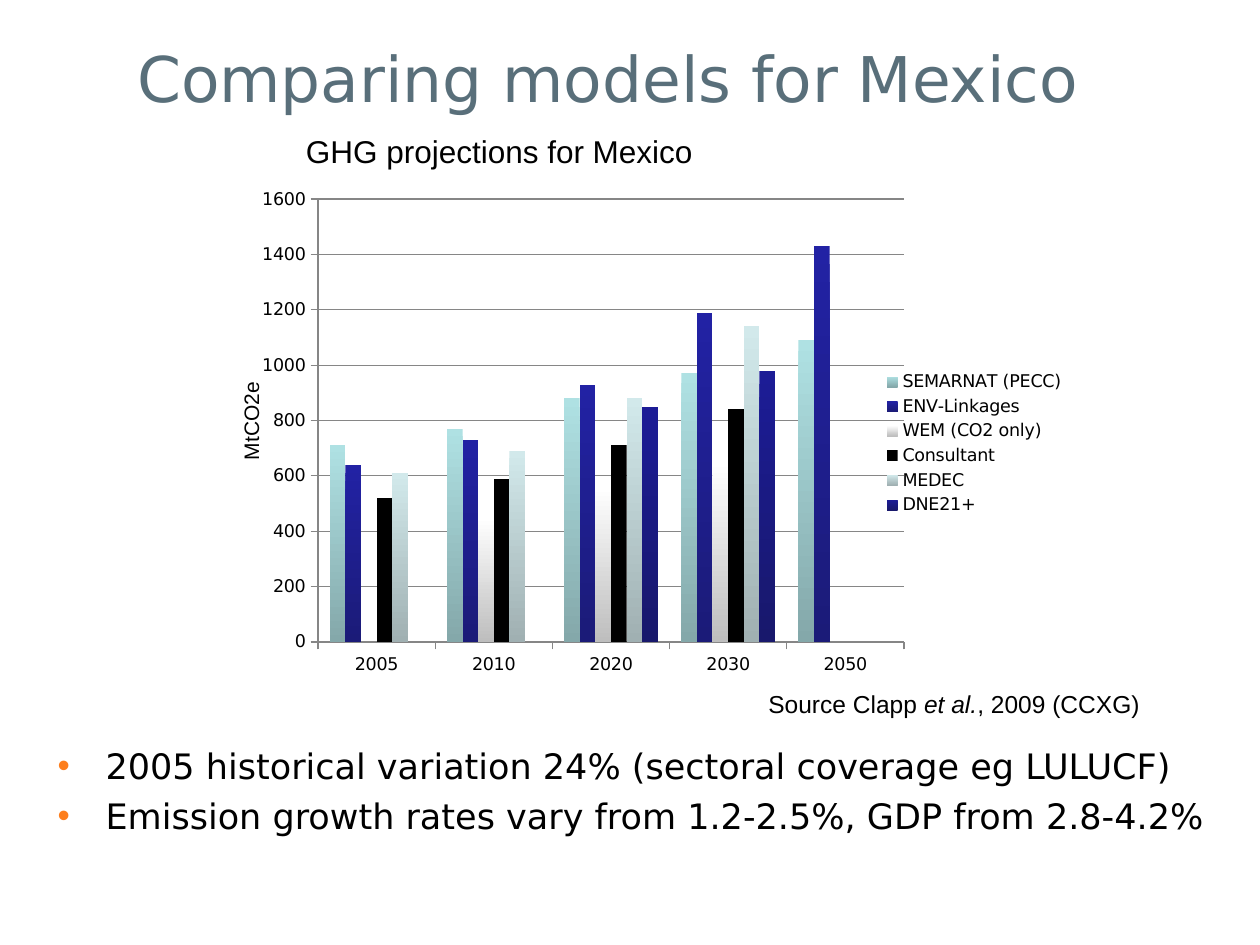
from lxml.etree import SubElement
from pptx import Presentation
from pptx.chart.data import CategoryChartData
from pptx.dml.color import RGBColor
from pptx.enum.chart import XL_CHART_TYPE, XL_LEGEND_POSITION, XL_TICK_MARK
from pptx.enum.text import MSO_AUTO_SIZE
from pptx.oxml.ns import qn
from pptx.util import Inches, Pt

SANS = "DejaVu Sans"
YEARS = ["2005", "2010", "2020", "2030", "2050"]
SERIES = [
    ("SEMARNAT (PECC)", [710, 770, 880, 970, 1090], "AFE1E3", "84A8AA"),
    ("ENV-Linkages", [640, 730, 930, 1190, 1430], "2222A4", "1B1B78"),
    ("WEM (CO2 only)", [None, 450, 560, 650, None], "FFFFFF", "BEBEBE"),
    ("Consultant", [520, 590, 710, 840, None], "000000", "000000"),
    ("MEDEC", [610, 690, 880, 1140, None], "D2E9EB", "A0B0B2"),
    ("DNE21+", [None, None, 850, 980, None], "1C1C96", "18186C"),
]
BULLETS = [
    "2005 historical variation 24% (sectoral coverage eg LULUCF)",
    "Emission growth rates vary from 1.2-2.5%, GDP from 2.8-4.2%",
]
SOURCE = [("Source Clapp ", False), ("et al.", True), (", 2009 (CCXG)", False)]


def rgb(value):
    return RGBColor.from_string(value)


def add_bullet(para, color):
    properties = para._p.get_or_add_pPr()
    properties.set("marL", str(Inches(0.38)))
    properties.set("indent", str(Inches(-0.38)))
    bullet_color = SubElement(properties, qn("a:buClr"))
    SubElement(bullet_color, qn("a:srgbClr"), val=color)
    SubElement(properties, qn("a:buFont"), typeface="Arial")
    SubElement(properties, qn("a:buChar"), char="•")


def add_text(page, paragraphs, place, size, font="Arial", color="000000",
             wrap=True, grow=False, rotation=0, top=0.05, bullet=None, space=0):
    box = page.shapes.add_textbox(*map(Inches, place))
    box.rotation = rotation
    frame = box.text_frame
    frame.word_wrap = wrap
    frame.margin_top = Inches(top)
    frame.auto_size = MSO_AUTO_SIZE.SHAPE_TO_FIT_TEXT if grow else MSO_AUTO_SIZE.NONE
    for index, spans in enumerate(paragraphs):
        para = frame.add_paragraph() if index else frame.paragraphs[0]
        if index and space:
            para.space_before = Pt(space)
        if bullet:
            add_bullet(para, bullet)
        for text, italic in spans:
            span = para.add_run()
            span.text = text
            span.font.name = font
            span.font.size = Pt(size)
            span.font.italic = italic
            span.font.color.rgb = rgb(color)


def set_layout(element, x, y, width, height, inner=False):
    layout = element.get_or_add_layout() if hasattr(element, "get_or_add_layout") else None
    if layout is None:
        layout = element.find(qn("c:layout"))
        if layout is None:
            layout = element.makeelement(qn("c:layout"), {})
            element.insert(0, layout)
    for child in list(layout):
        layout.remove(child)
    manual = SubElement(layout, qn("c:manualLayout"))
    if inner:
        SubElement(manual, qn("c:layoutTarget"), val="inner")
    for name in ("xMode", "yMode"):
        SubElement(manual, qn("c:" + name), val="edge")
    for name, value in zip("xywh", (x, y, width, height)):
        SubElement(manual, qn("c:" + name), val=str(value))


def add_projections(page):
    data = CategoryChartData()
    data.categories = YEARS
    for name, values, _, _ in SERIES:
        data.add_series(name, values)
    place = map(Inches, (2, 1.5, 6.55, 4.04))
    chart = page.shapes.add_chart(XL_CHART_TYPE.COLUMN_CLUSTERED, *place, data).chart
    chart.has_title = False
    chart.font.name = SANS
    chart.font.size = Pt(10)
    chart.font.color.rgb = rgb("000000")

    plot = chart.plots[0]
    plot.gap_width = 150
    plot.overlap = 0
    plot.vary_by_categories = False
    for series, (_, _, upper, lower) in zip(plot.series, SERIES):
        fill = series.format.fill
        fill.gradient()
        fill.gradient_angle = 270
        for stop, color in zip(fill.gradient_stops, (upper, lower)):
            stop.color.rgb = rgb(color)
        series.invert_if_negative = False

    values = chart.value_axis
    values.minimum_scale, values.maximum_scale, values.major_unit = 0, 1600, 200
    values.has_major_gridlines = True
    chart.category_axis.has_major_gridlines = False
    for axis in (chart.category_axis, values):
        axis.major_tick_mark = XL_TICK_MARK.OUTSIDE
        axis.minor_tick_mark = XL_TICK_MARK.NONE
    for part in (chart.category_axis, values, values.major_gridlines):
        part.format.line.color.rgb = rgb("868686")
        part.format.line.width = Pt(0.75)

    chart.has_legend = True
    chart.legend.position = XL_LEGEND_POSITION.RIGHT
    chart.legend.include_in_layout = False
    set_layout(chart._chartSpace.chart.plotArea, 0.08, 0.02, 0.71, 0.87, inner=True)
    set_layout(chart.legend._element, 0.76, 0.35, 0.23, 0.3)


def main():
    deck = Presentation()
    deck.slide_width, deck.slide_height = Inches(10), Inches(7.5)
    page = deck.slides.add_slide(deck.slide_layouts[6])
    add_text(page, [[("Comparing models for Mexico", False)]], (0.99, 0.22, 8.11, 0.94),
             36, font=SANS, color="596F7A", top=0.09)
    add_projections(page)
    add_text(page, [[(text, False)] for text in BULLETS], (0.36, 5.83, 9.64, 1.67),
             20, font=SANS, top=0.08, bullet="FD7E1D", space=4.7)
    add_text(page, [[("MtCO2e", False)]], (1.1, 2.71, 1.78, 0.3), 12,
             grow=True, rotation=270)
    add_text(page, [SOURCE], (6, 5.42, 3.17, 0.34), 14, wrap=False, grow=True)
    add_text(page, [[("GHG projections for Mexico", False)]], (2.33, 1, 3.4, 0.4), 18,
             wrap=False, grow=True)
    deck.save("out.pptx")


if __name__ == "__main__":
    main()
